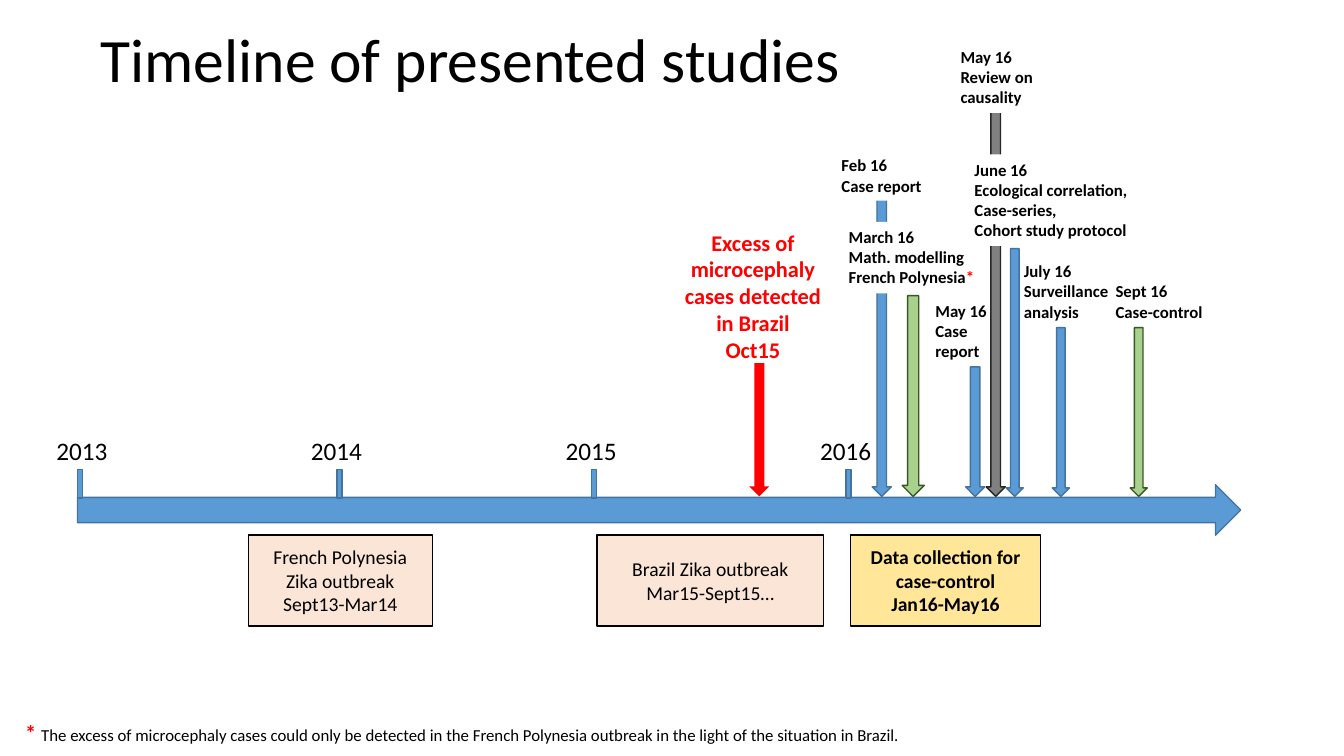
from pptx import Presentation
from pptx.dml.color import RGBColor
from pptx.enum.shapes import MSO_SHAPE as Shape
from pptx.enum.text import MSO_ANCHOR as Anchor, PP_ALIGN as Align
from pptx.util import Pt

# Content: lengths in points, boxes as (left, top, width, height)
BLACK, WHITE, RED = "000000", "FFFFFF", "FF0000"
BLUE, GREEN, GRAY = ("5B9BD5", "43739E"), ("A9D18E", "385723"), ("808080", "262626")
PEACH, YELLOW = "FBE5D6", "FFE699"

TITLE = "Timeline of presented studies"
AXIS = (55.4, 346.3, 830.9, 36)
YEARS = [("2013", 55.4), ("2014", 240.6), ("2015", 422.6), ("2016", 604.2)]
FIRST_YEAR_LEFT, YEAR_STEP = 33.1, 181.9

PERIODS = [  # lines, left, width, fill, bold
    (["French Polynesia Zika outbreak", "Sept13-Mar14"], 177.4, 131.4, PEACH, False),
    (["Brazil Zika outbreak", "Mar15-Sept15…"], 426.4, 162, PEACH, False),
    (["Data collection for case-control", "Jan16-May16"], 607.7, 135.4, YELLOW, True),
]

ARROW_TIP = 354.6
ARROWS = [  # left, top, width, (fill, line)
    (704.4, 69.1, 13.7, GRAY),
    (623, 134.6, 13.7, BLUE),
    (644.4, 211.2, 15.8, GREEN),
    (807.3, 234, 12.2, GREEN),
    (751.7, 234, 12.2, BLUE),
    (718.8, 177.6, 12.2, BLUE),
    (535.2, 259.4, 14.4, (RED, None)),
    (689.7, 262.1, 13.7, BLUE),
]

STUDIES = [  # lines, box, fill, wrap
    (["March 16", "Math. modelling French Polynesia*"], (599.2, 158.4, 105.1, 51.1), WHITE, True),
    (["Sept 16", "Case-control"], (789.8, 197.3, 77, 36), None, False),
    (["July 16", "Surveillance analysis"], (724.3, 182.9, 76.3, 51.1), None, True),
    (["June 16", "Ecological correlation,", "Case-series,", "Cohort study protocol"],
     (689, 110.2, 139, 65.5), WHITE, True),
    (["Feb 16", "Case report"], (594, 107.3, 72, 36), WHITE, False),
    (["May 16", "Case report"], (661, 211, 59, 51.1), None, True),
    (["May 16", "Review on causality"], (679, 29.5, 94.3, 51.1), WHITE, True),
]

EXCESS = ["Excess of microcephaly cases detected in Brazil", "Oct15"]
FOOTNOTE = ("The excess of microcephaly cases could only be detected in the French "
            "Polynesia outbreak in the light of the situation in Brazil.")

deck = Presentation()
deck.slide_width, deck.slide_height = Pt(960), Pt(540)
page = deck.slides.add_slide(deck.slide_layouts[6])


def color(value):
    return RGBColor.from_string(value)


def add_shape(kind, box, fill, line=None):
    shape = page.shapes.add_shape(kind, *map(Pt, box))
    shape.shadow.inherit = False
    shape.fill.solid()
    shape.fill.fore_color.rgb = color(fill)
    if line:
        shape.line.color.rgb = color(line)
        shape.line.width = Pt(1)
    else:
        shape.line.fill.background()
    return shape


def add_text_box(box):
    return page.shapes.add_textbox(*map(Pt, box))


def write(shape, lines, size, bold=False, ink=BLACK, align=Align.LEFT,
          anchor=Anchor.TOP, wrap=True):
    """Fill a shape with paragraphs; a closing asterisk turns red."""
    frame = shape.text_frame
    frame.word_wrap, frame.vertical_anchor = wrap, anchor
    for index, line in enumerate(lines):
        para = frame.paragraphs[0] if index == 0 else frame.add_paragraph()
        para.alignment = align
        para.font.name, para.font.size, para.font.bold = "Calibri", Pt(size), bold
        para.font.color.rgb = color(ink)
        body = line.rstrip("*")
        para.add_run().text = body
        if body != line:
            star = para.add_run()
            star.text = "*"
            star.font.color.rgb = color(RED)
    return frame


# Title
title = write(add_text_box((64.8, -7.2, 828, 104.4)), [TITLE], 44, anchor=Anchor.MIDDLE)
title.paragraphs[0].line_spacing = 0.9

# Study arrows, all ending on the axis, then the axis itself
for left, top, width, (fill, line) in ARROWS:
    add_shape(Shape.DOWN_ARROW, (left, top, width, ARROW_TIP - top), fill, line)
add_shape(Shape.RIGHT_ARROW, AXIS, *BLUE)

# Year ticks and labels
for index, (year, tick_left) in enumerate(YEARS):
    add_shape(Shape.RECTANGLE, (tick_left, 335.4, 3.6, 20.2), *BLUE)
    label = add_text_box((FIRST_YEAR_LEFT + index * YEAR_STEP, 307.6, 51.1, 28.8))
    write(label, [year], 18, wrap=False)

# Periods below the axis
for lines, left, width, fill, bold in PERIODS:
    period = add_shape(Shape.RECTANGLE, (left, 382.3, width, 64.8), fill, BLACK)
    write(period, lines, 14, bold, align=Align.CENTER, anchor=Anchor.MIDDLE)

# Study labels above the axis
for lines, box, fill, wrap in STUDIES:
    study = add_shape(Shape.RECTANGLE, box, fill) if fill else add_text_box(box)
    write(study, lines, 12, True, wrap=wrap)

write(add_text_box((474.5, 175.7, 126.7, 71.3)), EXCESS, 16, True, RED,
      Align.CENTER, Anchor.MIDDLE)

# Footnote
note = write(add_text_box((10.8, 509.8, 640.8, 26.6)), ["* "], 16, True, RED, wrap=False)
span = note.paragraphs[0].add_run()
span.text = FOOTNOTE
span.font.size, span.font.bold = Pt(12), False
span.font.color.rgb = color(BLACK)

deck.save("out.pptx")
